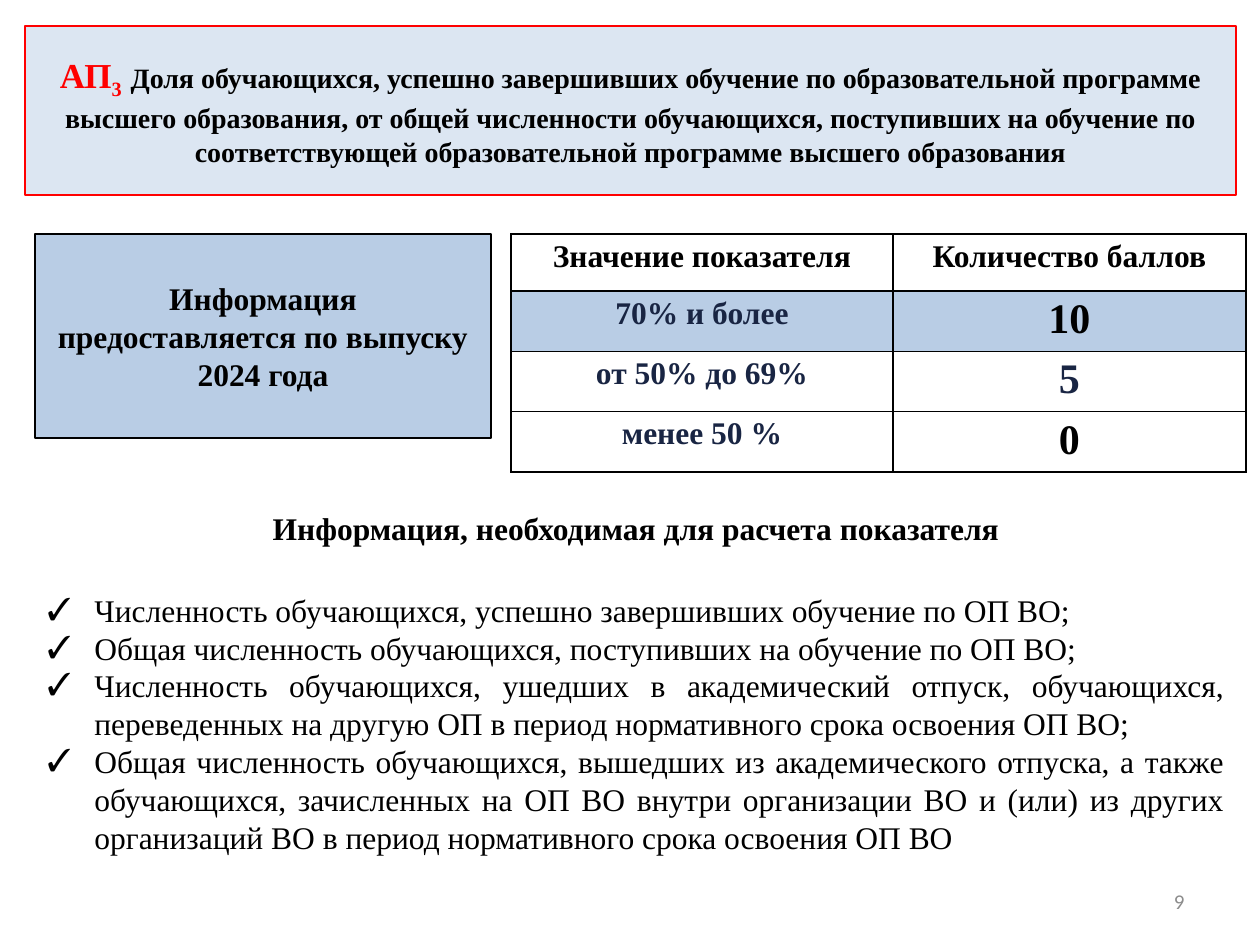
from dataclasses import dataclass

from lxml import etree
from pptx import Presentation
from pptx import util as u
from pptx.dml.color import RGBColor
from pptx.enum import shapes, text
from pptx.oxml import ns

CENTER = text.PP_ALIGN.CENTER
JUSTIFY = text.PP_ALIGN.JUSTIFY
MIDDLE = text.MSO_ANCHOR.MIDDLE


@dataclass(frozen=True)
class Theme:
    serif: str = "Times New Roman"
    sans: str = "Calibri"
    black: str = "000000"
    navy: str = "192543"
    red: str = "FF0000"
    gray: str = "8C8C8C"
    white: str = "FFFFFF"
    blue: str = "B9CDE5"
    pale: str = "DCE6F2"
    code: int = 20
    title: int = 16
    body: int = 18
    score: int = 24
    number: int = 12


class Deck:
    scale = 914400 / 126

    def __init__(self, theme, width, height):
        self.t = theme
        self.prs = Presentation()
        self.prs.slide_width, self.prs.slide_height = self.px(width, height)
        self.s = self.prs.slides.add_slide(self.prs.slide_layouts[6])

    def px(self, *lengths):
        return [u.Emu(round(n * self.scale)) for n in lengths]

    def run(self, p, words, size, color=None, bold=True, font=None, baseline=0):
        r = p.add_run()
        r.text = words
        style = {"size": u.Pt(size), "bold": bold, "name": font or self.t.serif}
        for key, value in style.items():
            setattr(r.font, key, value)
        r.font.color.rgb = RGBColor.from_string(color or self.t.black)
        if baseline:
            r.font._element.set("baseline", str(baseline * 1000))

    def frame(self, sp, anchor):
        tf = sp.text_frame
        for key, value in {"word_wrap": True, "vertical_anchor": anchor}.items():
            setattr(tf, key, value)
        return tf

    def box(self, at, fill, line, runs):
        sp = self.s.shapes.add_shape(shapes.MSO_SHAPE.RECTANGLE, *self.px(*at))
        sp.shadow.inherit = False
        sp.fill.solid()
        sp.fill.fore_color.rgb = RGBColor.from_string(fill)
        sp.line.color.rgb = RGBColor.from_string(line)
        sp.line.width = u.Pt(0.75)
        p = self.frame(sp, MIDDLE).paragraphs[0]
        p.alignment = CENTER
        for r in runs:
            self.run(p, **r)

    def label(self, at, words, align, anchor=text.MSO_ANCHOR.TOP, **style):
        sp = self.s.shapes.add_textbox(*self.px(*at))
        tf = self.frame(sp, anchor)
        p = tf.paragraphs[0]
        p.alignment = align
        self.run(p, words, **style)
        return tf

    def bullets(self, tf, items, indent, gap):
        for i, item in enumerate(items):
            p = tf.add_paragraph()
            pPr = p._p.get_or_add_pPr()
            left = self.px(indent)[0]
            pPr.set("marL", str(left))
            pPr.set("indent", str(-left))
            etree.SubElement(pPr, ns.qn("a:buFont")).set("typeface", self.t.serif)
            etree.SubElement(pPr, ns.qn("a:buChar")).set("char", "✓")
            p.alignment = JUSTIFY
            p.space_before = u.Pt(0 if i else gap)
            self.run(p, item, self.t.body, bold=False)

    def border(self, cell):
        tcPr = cell._tc.get_or_add_tcPr()
        for i, side in enumerate(("a:lnL", "a:lnR", "a:lnT", "a:lnB")):
            ln = etree.Element(ns.qn(side), w=str(u.Pt(1)))
            fill = etree.SubElement(ln, ns.qn("a:solidFill"))
            etree.SubElement(fill, ns.qn("a:srgbClr")).set("val", self.t.black)
            tcPr.insert(i, ln)

    def table(self, left, top, widths, heights, rows):
        at = self.px(left, top, sum(widths), sum(heights))
        tbl = self.s.shapes.add_table(len(rows), len(widths), *at).table
        for key in ("first_row", "horz_banding"):
            setattr(tbl, key, False)
        for col, width in zip(tbl.columns, self.px(*widths)):
            col.width = width
        for row, height, (fill, cells) in zip(tbl.rows, self.px(*heights), rows):
            row.height = height
            for cell, (words, size, color) in zip(row.cells, cells):
                cell.margin_top, cell.margin_bottom = self.px(5, 5)
                cell.fill.solid()
                cell.fill.fore_color.rgb = RGBColor.from_string(fill)
                p = cell.text_frame.paragraphs[0]
                p.alignment = CENTER
                self.run(p, words, size, color)
                self.border(cell)


def main():
    t = Theme()
    d = Deck(t, 1260, 945)
    d.label((903, 876, 294, 50), "9", text.PP_ALIGN.RIGHT, MIDDLE,
            size=t.number, color=t.gray, bold=False, font=t.sans)
    d.table(511, 234, (382, 353), (57, 59, 59, 59), [
        (t.white, [("Значение показателя", t.body, t.black),
                   ("Количество баллов", t.body, t.black)]),
        (t.blue, [("70% и более", t.body, t.navy), ("10", t.score, t.black)]),
        (t.white, [("от 50% до 69%", t.body, t.navy), ("5", t.score, t.navy)]),
        (t.white, [("менее 50 %", t.body, t.navy), ("0", t.score, t.black)]),
    ])
    d.box((35, 234, 456, 204), t.blue, t.black, [
        {"words": "Информация предоставляется по выпуску 2024 года", "size": t.body},
    ])
    tf = d.label((35, 503, 1202, 344), "Информация, необходимая для расчета показателя",
                 CENTER, size=t.body)
    d.bullets(tf, [
        "Численность обучающихся, успешно завершивших обучение по ОП ВО;",
        "Общая численность обучающихся, поступивших на обучение по ОП ВО;",
        "Численность обучающихся, ушедших в академический отпуск, обучающихся, "
        "переведенных на другую ОП в период нормативного срока освоения ОП ВО;",
        "Общая численность обучающихся, вышедших из академического отпуска, "
        "а также обучающихся, зачисленных на ОП ВО внутри организации ВО и (или) "
        "из других организаций ВО в период нормативного срока освоения ОП ВО",
    ], indent=47, gap=25)
    d.box((25, 26, 1211, 169), t.pale, t.red, [
        {"words": "АП", "size": t.code, "color": t.red},
        {"words": "3", "size": t.code, "color": t.red, "baseline": -25},
        {"words": " ", "size": t.code},
        {"words": "Доля обучающихся, успешно завершивших обучение по образовательной "
                  "программе высшего образования, от общей численности обучающихся, "
                  "поступивших на обучение по соответствующей образовательной "
                  "программе высшего образования", "size": t.title},
    ])
    d.prs.save("out.pptx")


if __name__ == "__main__":
    main()
